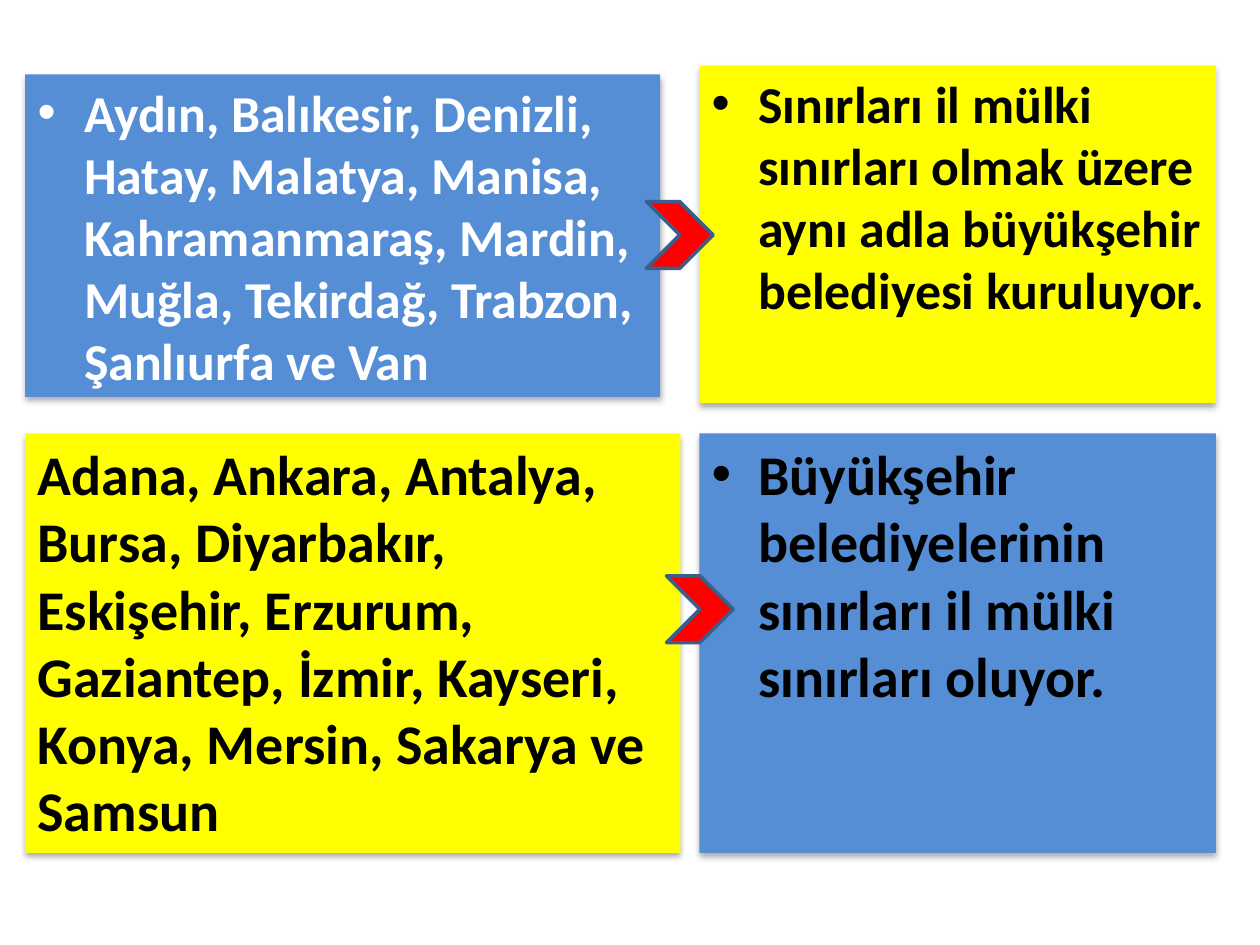
from dataclasses import dataclass

from lxml import etree
from pptx import Presentation
from pptx import util as u
from pptx.dml.color import RGBColor
from pptx.enum import shapes, text
from pptx.oxml import parse_xml
from pptx.oxml.ns import nsdecls, qn


@dataclass(frozen=True)
class Theme:
    blue: str = "558ED5"
    yellow: str = "FFFF00"
    red: str = "FF0000"
    outline: str = "3A5F8C"
    white: str = "FFFFFF"
    black: str = "000000"
    font: str = "Calibri"
    small: float = 29.6
    large: float = 32


@dataclass(frozen=True)
class Panel:
    left: float
    top: float
    width: float
    height: float
    fill: str
    color: str
    size: float
    bulleted: bool
    words: str


THEME = Theme()
LEFT, RIGHT, RIGHT_WIDTH = 0.2, 5.55, 4.1
LOWER_TOP, LOWER_HEIGHT = 3.44, 3.33
INDENT = u.Inches(0.37)
RIGHT_MARGIN = u.Inches(0.07)
CHEVRON_SIZE = 0.53

PANELS = [
    Panel(LEFT, 0.59, 5.04, 2.56, THEME.blue, THEME.white, THEME.small, True,
          "Aydın, Balıkesir, Denizli, Hatay, Malatya, Manisa, Kahramanmaraş, "
          "Mardin, Muğla, Tekirdağ, Trabzon, Şanlıurfa ve Van"),
    Panel(LEFT, LOWER_TOP, 5.2, LOWER_HEIGHT, THEME.yellow, THEME.black, THEME.large, False,
          "Adana, Ankara, Antalya, Bursa, Diyarbakır, Eskişehir, Erzurum, "
          "Gaziantep, İzmir, Kayseri, Konya, Mersin, Sakarya ve Samsun"),
    Panel(RIGHT, LOWER_TOP, RIGHT_WIDTH, LOWER_HEIGHT, THEME.blue, THEME.black, THEME.large, True,
          "Büyükşehir belediyelerinin sınırları il mülki sınırları oluyor."),
    Panel(RIGHT, 0.52, RIGHT_WIDTH, 2.68, THEME.yellow, THEME.black, THEME.small, True,
          "Sınırları il mülki sınırları olmak üzere aynı adla büyükşehir "
          "belediyesi kuruluyor."),
]
CHEVRONS = [(5.13, 1.6), (5.29, 4.57)]


def add_filled(page, kind, left: float, top: float, width: float, height: float, fill: str):
    box = page.shapes.add_shape(kind, u.Inches(left), u.Inches(top),
                                u.Inches(width), u.Inches(height))
    box.shadow.inherit = False
    box.fill.solid()
    box.fill.fore_color.rgb = RGBColor.from_string(fill)
    return box


def add_soft_shadow(box) -> None:
    effects = box._element.spPr.find(qn("a:effectLst"))
    effects.append(parse_xml(
        f'<a:outerShdw {nsdecls("a")} blurRad="{u.Pt(3.5)}" dist="{u.Pt(2.2)}" '
        f'dir="5400000" rotWithShape="0"><a:srgbClr val="{THEME.black}">'
        '<a:alpha val="32000"/></a:srgbClr></a:outerShdw>'))


def add_bullet(para) -> None:
    props = para._p.get_or_add_pPr()
    props.set("marL", str(INDENT))
    props.set("indent", str(-INDENT))
    etree.SubElement(props, qn("a:buFont")).set("typeface", "Arial")
    etree.SubElement(props, qn("a:buChar")).set("char", "•")


def add_panel(page, panel: Panel) -> None:
    box = add_filled(page, shapes.MSO_SHAPE.RECTANGLE, panel.left, panel.top,
                     panel.width, panel.height, panel.fill)
    box.line.fill.background()
    add_soft_shadow(box)

    frame = box.text_frame
    frame.word_wrap = True
    frame.margin_right = RIGHT_MARGIN
    frame.vertical_anchor = text.MSO_ANCHOR.TOP
    para = frame.paragraphs[0]
    para.alignment = text.PP_ALIGN.LEFT
    if panel.bulleted:
        add_bullet(para)
    span = para.add_run()
    span.text = panel.words
    span.font.name = THEME.font
    span.font.size = u.Pt(panel.size)
    span.font.bold = True
    span.font.color.rgb = RGBColor.from_string(panel.color)


def add_chevron(page, left: float, top: float) -> None:
    chevron = add_filled(page, shapes.MSO_SHAPE.CHEVRON, left, top,
                         CHEVRON_SIZE, CHEVRON_SIZE, THEME.red)
    chevron.line.color.rgb = RGBColor.from_string(THEME.outline)
    chevron.line.width = u.Pt(2)


def main() -> None:
    deck = Presentation()
    deck.slide_width, deck.slide_height = u.Inches(10), u.Inches(7.5)
    page = deck.slides.add_slide(deck.slide_layouts[6])

    # Text panels, then the chevrons that lead from left to right
    for panel in PANELS:
        add_panel(page, panel)
    for left, top in CHEVRONS:
        add_chevron(page, left, top)

    deck.save("out.pptx")


if __name__ == "__main__":
    main()
